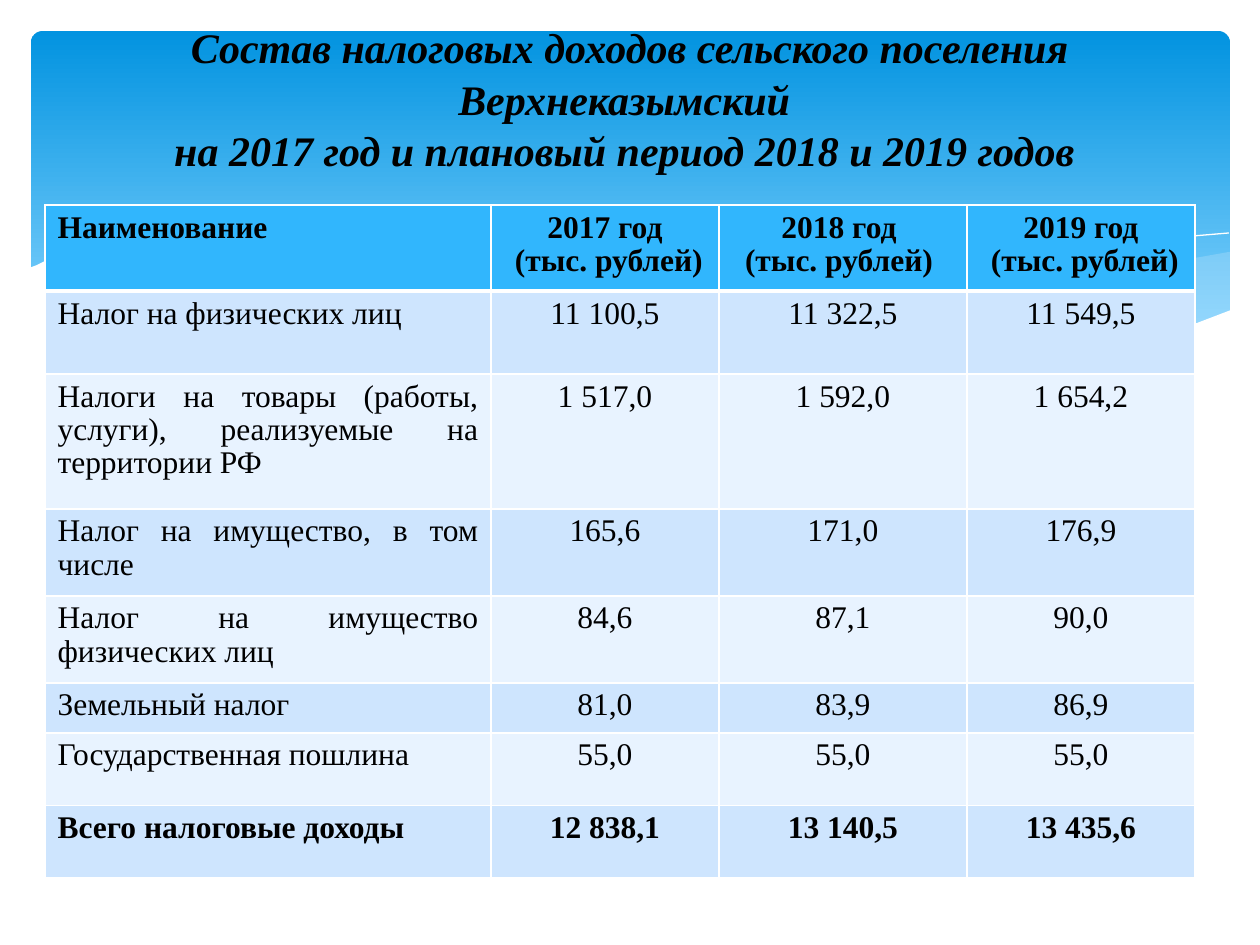
from lxml import etree
from pptx import Presentation
from pptx.dml.color import RGBColor
from pptx.enum.shapes import MSO_SHAPE
from pptx.enum.text import MSO_ANCHOR, PP_ALIGN
from pptx.oxml.ns import qn
from pptx.util import Emu, Pt

SCALE = 914400 // 126
FONT = "Times New Roman"
ROUND = MSO_SHAPE.ROUNDED_RECTANGLE
MIDDLE = MSO_ANCHOR.MIDDLE
LEFT, CENTER, JUSTIFY = PP_ALIGN.LEFT, PP_ALIGN.CENTER, PP_ALIGN.JUSTIFY

TITLE = ("Состав налоговых доходов сельского поселения Верхнеказымский \v"
         "на 2017 год и плановый период 2018 и 2019 годов ")
COLS = [446, 228, 248, 228]
ROWS = [86, 83, 135, 87, 87, 50, 73, 72]
DATA = [
    ["Наименование", "2017 год\n (тыс. рублей) ", "2018 год \n(тыс. рублей) ",
     "2019 год\n (тыс. рублей) "],
    ["Налог на физических лиц ", "11 100,5", "11 322,5", "11 549,5"],
    ["Налоги на товары (работы, услуги), реализуемые на территории РФ",
     "1 517,0", "1 592,0", "1 654,2"],
    ["Налог на имущество, в том числе ", "165,6", "171,0", "176,9"],
    ["Налог на имущество физических лиц", "84,6", "87,1", "90,0"],
    ["Земельный налог ", "81,0", "83,9", "86,9"],
    ["Государственная пошлина ", "55,0", "55,0", "55,0"],
    ["Всего налоговые доходы ", "12 838,1", "13 140,5", "13 435,6"],
]

# Wave outlines, in px
RIGHT_BAND = [(1229, 252), (1178, 261), (1123, 273), (1085, 281), (1014, 299),
              (949, 312), (890, 324), (833, 334), (888, 342), (939, 347),
              (984, 349), (1026, 350), (1063, 349), (1099, 346), (1130, 340),
              (1160, 334), (1187, 326), (1213, 318), (1230, 311), (1230, 252)]
MIDDLE_BAND = [(1125, 344), (1055, 334), (977, 320), (890, 302), (793, 280),
               (736, 266), (682, 256), (632, 247), (586, 241), (529, 235),
               (479, 233), (433, 234), (394, 237), (360, 241), (431, 251),
               (509, 266), (566, 280), (668, 302), (757, 321), (838, 335),
               (911, 345), (974, 349), (1031, 350), (1080, 349), (1125, 344)]
LONG_LINE = [(389, 246), (413, 242), (445, 238), (488, 236), (545, 236),
             (616, 239), (701, 248), (801, 262), (876, 276), (958, 294),
             (1047, 316), (1143, 343)]
RIGHT_LINE = [(772, 324), (847, 304), (907, 289), (978, 272), (1053, 257),
              (1128, 244), (1182, 237), (1229, 233)]
WHITE_WAVE = [(1231, 310), (1197, 323), (1159, 334), (1118, 342), (1071, 347),
              (1019, 349), (959, 347), (892, 340), (816, 330), (730, 315),
              (634, 294), (563, 277), (492, 260), (428, 248), (368, 239),
              (315, 234), (266, 232), (223, 232), (184, 233), (150, 236),
              (120, 241), (96, 246), (74, 251), (58, 256), (45, 261),
              (37, 265), (29, 268), (29, 415), (1231, 415)]


def px(n):
    return Emu(n * SCALE)


def color(value):
    return RGBColor.from_string(value)


def add_text(tf, text, size=18, bold=False, italic=False, align=LEFT, spacing=1.0):
    for i, line in enumerate(text.split("\n")):
        p = tf.paragraphs[0] if i == 0 else tf.add_paragraph()
        p.text = line
        p.alignment, p.line_spacing = align, spacing
        for r in p.runs:
            f = r.font
            f.name, f.size, f.bold, f.italic = FONT, Pt(size), bold, italic
            f.color.rgb = color("000000")


def add_panel(s):
    sp = s.shapes.add_shape(ROUND, px(31), px(31), px(1199), px(340))
    sp.adjustments[0] = 0.034
    sp.shadow.inherit = False
    sp.line.fill.background()
    sp.fill.gradient()
    sp.fill.gradient_angle = 270
    stops = sp.fill.gradient_stops
    for stop, pos, value in zip(stops, (0, 0.9), ("0293E0", "83D3FE")):
        stop.position, stop.color.rgb = pos, color(value)


def add_wave(s, points, fill=None, alpha=100, line=None):
    builder = s.shapes.build_freeform(*points[0], scale=SCALE)
    builder.add_line_segments(points[1:], close=fill is not None)
    sp = builder.convert_to_shape()
    sp.shadow.inherit = False
    if fill:
        sp.fill.solid()
        sp.fill.fore_color.rgb = color(fill)
        clr = sp.fill._xPr.find(qn("a:solidFill"))[0]
        etree.SubElement(clr, qn("a:alpha"), val=str(alpha * 1000))
    else:
        sp.fill.background()
    if line:
        sp.line.color.rgb = color(line)
        sp.line.width = Pt(0)
    else:
        sp.line.fill.background()


def add_title(s):
    tf = s.shapes.add_textbox(px(63), px(45), px(1133), px(149)).text_frame
    tf.word_wrap = True
    tf.vertical_anchor = MIDDLE
    tf.margin_top, tf.margin_bottom = 0, px(44)
    add_text(tf, TITLE, size=24, bold=True, italic=True, align=CENTER, spacing=1.03)


def set_borders(cell, widths):
    tcPr = cell._tc.get_or_add_tcPr()
    for i, (side, width) in enumerate(widths.items()):
        ln = etree.Element(qn("a:ln" + side), w=str(Pt(width)))
        fill = etree.SubElement(ln, qn("a:solidFill"))
        etree.SubElement(fill, qn("a:srgbClr"), val="FFFFFF")
        tcPr.insert(i, ln)


def add_tax_table(s):
    frame = s.shapes.add_table(len(ROWS), len(COLS), px(45), px(205),
                               px(sum(COLS)), px(sum(ROWS)))
    table = frame.table
    for col, width in zip(table.columns, COLS):
        col.width = px(width)
    for i, (height, texts) in enumerate(zip(ROWS, DATA)):
        table.rows[i].height = px(height)
        header, total = i == 0, i == len(DATA) - 1
        fill = "31B6FD" if header else ("E8F3FF", "CEE5FE")[i % 2]
        for j, text in enumerate(texts):
            cell = table.cell(i, j)
            cell.fill.solid()
            cell.fill.fore_color.rgb = color(fill)
            set_borders(cell, {"L": 1, "R": 1, "T": 3 if i == 1 else 1,
                               "B": 3 if header else 1})
            align = CENTER if j else LEFT if header else JUSTIFY
            add_text(cell.text_frame, text, bold=header or total, align=align,
                     spacing=0.96)


def main():
    prs = Presentation()
    prs.slide_width, prs.slide_height = px(1260), px(945)
    s = prs.slides.add_slide(prs.slide_layouts[6])

    # Background panel and waves
    add_panel(s)
    add_wave(s, RIGHT_BAND, fill="C6E7FC", alpha=29)
    add_wave(s, MIDDLE_BAND, fill="C6E7FC", alpha=40)
    add_wave(s, LONG_LINE, line="FFFFFF")
    add_wave(s, RIGHT_LINE, line="FFFFFF")
    add_wave(s, WHITE_WAVE, fill="FFFFFF")

    # Content
    add_title(s)
    add_tax_table(s)
    prs.save("out.pptx")


if __name__ == "__main__":
    main()
